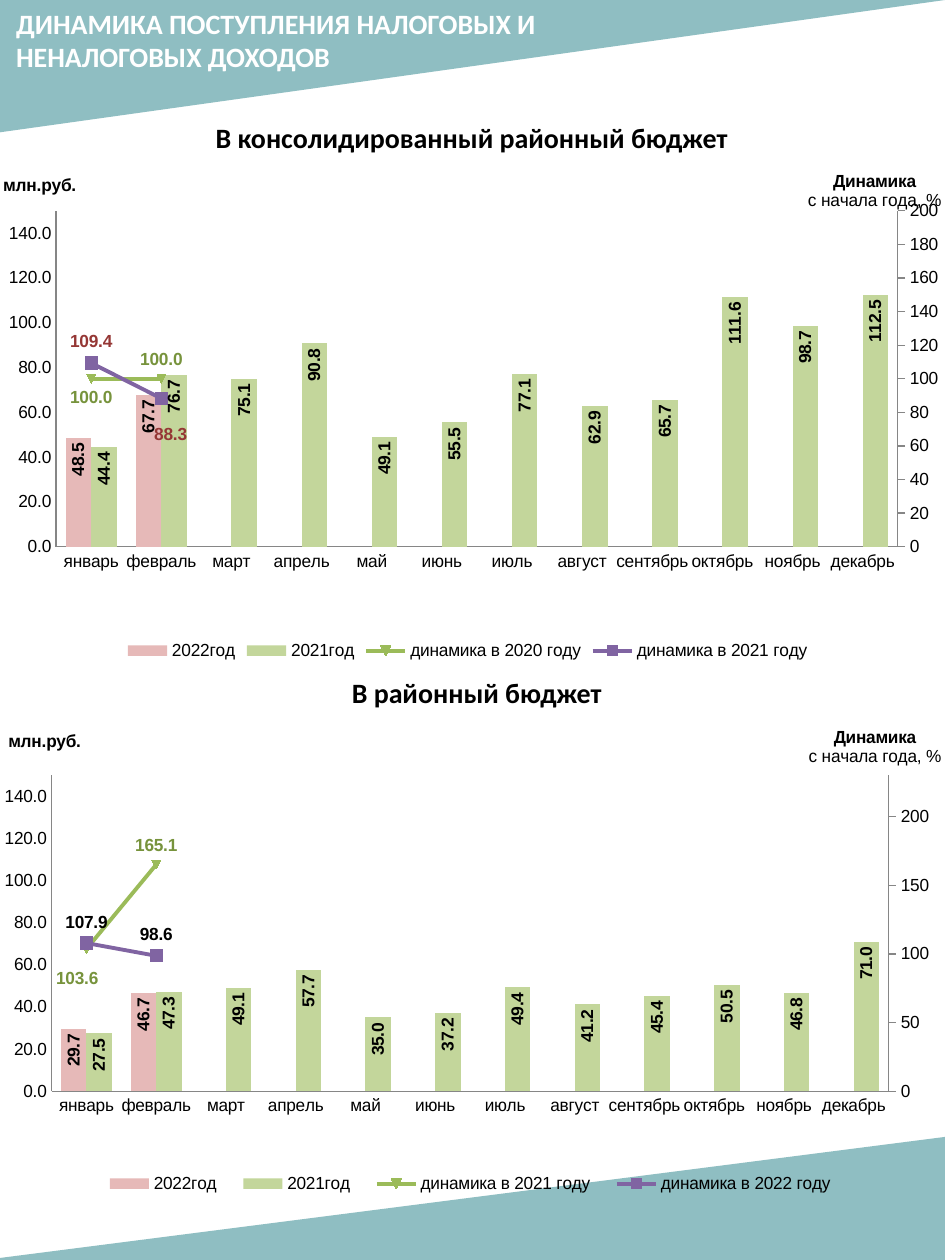
import copy
from dataclasses import dataclass

import pptx
import pptx.chart.axis
import pptx.chart.data
import pptx.dml.color
import pptx.enum.chart
import pptx.enum.shapes
import pptx.enum.text
import pptx.oxml
import pptx.oxml.ns
import pptx.util

Inches = pptx.util.Inches
Pt = pptx.util.Pt
LabelPosition = pptx.enum.chart.XL_LABEL_POSITION
TickMark = pptx.enum.chart.XL_TICK_MARK


@dataclass(frozen=True)
class Theme:
    band: str = "519AA0"
    white: str = "FFFFFF"
    ink: str = "000000"
    axis: str = "868686"
    bars: tuple = ("E6B9B8", "C3D69B")
    lines: tuple = ("9BBB59", "8064A2")
    green_label: str = "77933C"
    red_label: str = "953735"
    heading_font: str = "Calibri"
    chart_font: str = "Arial"
    heading_size: int = 16
    chart_size: int = 10


THEME = Theme()
MONTHS = ["январь", "февраль", "март", "апрель", "май", "июнь", "июль",
          "август", "сентябрь", "октябрь", "ноябрь", "декабрь"]
CONSOLIDATED = {
    "bars": {"2022год": [48.5, 67.7],
             "2021год": [44.4, 76.7, 75.1, 90.8, 49.1, 55.5, 77.1, 62.9, 65.7, 111.6, 98.7, 112.5]},
    "lines": {"динамика в 2020 году": [100, 100], "динамика в 2021 году": [109.4, 88.3]},
    "label_colors": (THEME.green_label, THEME.red_label),
    "lowered": {(0, 0): (0, 0), (1, 1): (0.01, 0.03)},
    "right_scale": {"maximum_scale": 200, "major_unit": 20},
    "plot": (0.06, 0.1, 0.9, 0.66),
    "legend": (0.13, 0.95, 0.74, 0.05),
}
DISTRICT = {
    "bars": {"2022год": [29.7, 46.7],
             "2021год": [27.5, 47.3, 49.1, 57.7, 35, 37.2, 49.4, 41.2, 45.4, 50.5, 46.8, 71]},
    "lines": {"динамика в 2021 году": [103.6, 165.1], "динамика в 2022 году": [107.9, 98.6]},
    "label_colors": (THEME.green_label, THEME.ink),
    "lowered": {(0, 0): (-0.01, 0.02)},
    "right_scale": {"maximum_scale": 230, "major_unit": 50},
    "plot": (0.05, 0.11, 0.9, 0.58),
    "legend": (0.09, 0.83, 0.82, 0.06),
}


def rgb(value):
    return pptx.dml.color.RGBColor.from_string(value)


def apply(target, values):
    for name, value in values.items():
        setattr(target, name, value)


def style_font(font, size, color=THEME.ink, bold=False, name=THEME.chart_font):
    apply(font, {"size": Pt(size), "bold": bold, "name": name})
    font.color.rgb = rgb(color)


def chart_xml(tag, body="", attributes=""):
    return pptx.oxml.parse_xml(
        f'<c:{tag} {pptx.oxml.ns.nsdecls("c", "a")} {attributes}>{body}</c:{tag}>')


def set_layout(parent, previous, position, mode='<c:xMode val="edge"/><c:yMode val="edge"/>'):
    for old in parent.xpath("./c:layout"):
        parent.remove(old)
    body = mode + "".join(f'<c:{name} val="{value}"/>' for name, value in zip("xywh", position))
    layout = chart_xml("layout", f"<c:manualLayout>{body}</c:manualLayout>")
    if previous is None:
        layout[0].insert(0, chart_xml("layoutTarget", attributes='val="inner"'))
        parent.insert(0, layout)
    else:
        previous.addnext(layout)


def add_band(slide, box, flip):
    band = slide.shapes.add_shape(pptx.enum.shapes.MSO_SHAPE.RIGHT_TRIANGLE, *map(Inches, box))
    band.shadow.inherit = False
    band.rotation = 180
    band.element.spPr.xfrm.set(flip, "1")
    band.fill.solid()
    band.fill.fore_color.rgb = rgb(THEME.band)
    band.line.fill.background()
    color = band.element.spPr.xpath("./a:solidFill/a:srgbClr")[0]
    color.append(pptx.oxml.parse_xml(f'<a:alpha {pptx.oxml.ns.nsdecls("a")} val="64000"/>'))


def add_heading(slide, box, text, color, align):
    frame = slide.shapes.add_textbox(*map(Inches, box)).text_frame
    frame.word_wrap = True
    paragraph = frame.paragraphs[0]
    paragraph.alignment = align
    run = paragraph.add_run()
    run.text = text
    style_font(run.font, THEME.heading_size, color, True, THEME.heading_font)


def split_lines(chart):
    area = chart.element.xpath("//c:plotArea")[0]
    bars = area.xpath("./c:barChart")[0]
    right_axes = [copy.deepcopy(axis) for axis in area.xpath("./c:catAx | ./c:valAx")]
    axis_ids = ("50010", "50020")
    for axis, own, other in zip(right_axes, axis_ids, reversed(axis_ids)):
        axis.xpath("./c:axId")[0].set("val", own)
        axis.xpath("./c:crossAx")[0].set("val", other)
        area.append(axis)
    hidden, right = right_axes
    pptx.chart.axis.CategoryAxis(hidden).visible = False
    right.xpath("./c:axPos")[0].set("val", "r")
    for crossing in right.xpath("./c:crosses | ./c:crossesAt"):
        right.remove(crossing)
    right.xpath("./c:crossAx")[0].addnext(chart_xml("crosses", attributes='val="max"'))
    ids = "".join(f'<c:axId val="{own}"/>' for own in axis_ids)
    lines = chart_xml("lineChart", '<c:grouping val="standard"/><c:varyColors val="0"/>'
                                   f'<c:marker val="1"/>{ids}')
    bars.addnext(lines)
    marker = lines.xpath("./c:marker")[0]
    for series in bars.xpath("./c:ser")[2:]:
        for invert in series.xpath("./c:invertIfNegative"):
            series.remove(invert)
        marker.addprevious(series)
    return pptx.chart.axis.ValueAxis(right)


def style_axis(axis, tick, number_format=None, scale=None):
    apply(axis, {"has_major_gridlines": False, "major_tick_mark": tick,
                 "minor_tick_mark": TickMark.NONE, **(scale or {})})
    axis.format.line.color.rgb = rgb(THEME.axis)
    style_font(axis.tick_labels.font, THEME.chart_size)
    if number_format:
        apply(axis.tick_labels, {"number_format": number_format, "number_format_is_linked": False})


def title_axis(axis, lines, position):
    title = axis.axis_title
    frame = title.text_frame
    for index, (text, bold) in enumerate(lines):
        paragraph = frame.add_paragraph() if index else frame.paragraphs[0]
        paragraph.alignment = pptx.enum.text.PP_ALIGN.CENTER
        run = paragraph.add_run()
        run.text = text
        style_font(run.font, THEME.chart_size, bold=bold)
    rotate(title.element.xpath(".//a:bodyPr"), "0")
    set_layout(title.element, title.element.xpath("./c:tx")[0], position)


def rotate(bodies, angle):
    for body in bodies:
        body.set("rot", angle)
        body.set("vert", "horz")


def label_series(series, color, position, number_format):
    labels = series.data_labels
    apply(labels, {"show_value": True, "position": position,
                   "number_format": number_format, "number_format_is_linked": False})
    style_font(labels.font, THEME.chart_size, color, True)


def lower_label(chart, trend, point, color, offset):
    label = chart.plots[1].series[trend].points[point].data_label
    label.position = LabelPosition.BELOW
    style_font(label.font, THEME.chart_size, color, True)
    entry = chart.element.xpath(
        f"//c:lineChart/c:ser[{trend + 1}]/c:dLbls/c:dLbl[c:idx/@val={point}]")[0]
    entry.xpath("./c:txPr")[0].addprevious(
        chart_xml("numFmt", attributes='formatCode="0.0" sourceLinked="0"'))
    if any(offset):
        set_layout(entry, entry.xpath("./c:idx")[0], offset, mode="")


def hide_leaders(chart):
    for labels in chart.element.xpath("//c:lineChart/c:ser/c:dLbls"):
        for leader in labels.xpath("./c:showLeaderLines"):
            labels.remove(leader)
        labels.append(chart_xml("showLeaderLines", attributes='val="0"'))
        labels.append(chart_xml("extLst", '<c:ext uri="{CE6537A1-D6FC-4f65-9D91-7224C49458BB}" '
                                'xmlns:c15="http://schemas.microsoft.com/office/drawing/2012/chart">'
                                '<c15:showLeaderLines val="0"/></c:ext>'))


def add_budget_chart(slide, box, budget):
    data = pptx.chart.data.CategoryChartData()
    data.categories = MONTHS
    for name, values in {**budget["bars"], **budget["lines"]}.items():
        data.add_series(name, values + [None] * (len(MONTHS) - len(values)))
    chart = slide.shapes.add_chart(pptx.enum.chart.XL_CHART_TYPE.COLUMN_CLUSTERED,
                                   *map(Inches, box), data).chart
    apply(chart, {"has_title": False, "has_legend": True})
    style_font(chart.font, THEME.chart_size)
    chart.element.xpath("./c:txPr")[0].addprevious(
        chart_xml("spPr", "<a:noFill/><a:ln><a:noFill/></a:ln>"))
    left_axis = chart.value_axis
    right_axis = split_lines(chart)
    columns, dynamics = chart.plots
    apply(columns, {"gap_width": 75, "overlap": 0, "vary_by_categories": False})

    for series, color in zip(columns.series, THEME.bars):
        series.format.fill.solid()
        series.format.fill.fore_color.rgb = rgb(color)
        label_series(series, THEME.ink, LabelPosition.INSIDE_END, "#,##0.0")
    rotate(chart.element.xpath("//c:barChart/c:ser/c:dLbls//a:bodyPr"), "-5400000")

    for series, color, label_color in zip(dynamics.series, THEME.lines, budget["label_colors"]):
        series.smooth = False
        series.format.line.color.rgb = rgb(color)
        series.format.line.width = Pt(2.25)
        label_series(series, label_color, LabelPosition.ABOVE, "0.0")
    square = dynamics.series[1].marker
    apply(square, {"style": pptx.enum.chart.XL_MARKER_STYLE.SQUARE, "size": 7})
    square.format.fill.solid()
    square.format.fill.fore_color.rgb = rgb(THEME.bars[0])
    for (trend, point), offset in budget["lowered"].items():
        lower_label(chart, trend, point, budget["label_colors"][trend], offset)
    hide_leaders(chart)

    style_axis(chart.category_axis, TickMark.NONE)
    style_axis(left_axis, TickMark.NONE, r"#\ ##0.0",
               {"minimum_scale": 0, "maximum_scale": 150, "major_unit": 20})
    style_axis(right_axis, TickMark.OUTSIDE, "0", {"minimum_scale": 0, **budget["right_scale"]})
    title_axis(left_axis, [("млн.руб.", True)], (0, 0.02))
    title_axis(right_axis, [("Динамика", True), ("с начала года, %", False)], (0.86, 0.01))

    apply(chart.legend, {"position": pptx.enum.chart.XL_LEGEND_POSITION.BOTTOM,
                         "include_in_layout": False})
    style_font(chart.legend.font, THEME.chart_size)
    set_layout(chart.element.xpath("//c:plotArea")[0], None, budget["plot"])
    legend = chart.element.xpath("//c:legend")[0]
    set_layout(legend, legend.xpath("./c:legendPos")[0], budget["legend"])


def main():
    deck = pptx.Presentation()
    apply(deck, {"slide_width": Inches(7.5), "slide_height": Inches(10)})
    slide = deck.slides.add_slide(deck.slide_layouts[6])
    align = pptx.enum.text.PP_ALIGN
    add_band(slide, (0, 0, 7.5, 1.05), "flipH")
    add_band(slide, (-0.13, 9.02, 7.65, 0.98), "flipV")
    for box, text, color, side in (
            ((0.03, 0, 4.87, 0.63), "ДИНАМИКА ПОСТУПЛЕНИЯ НАЛОГОВЫХ И НЕНАЛОГОВЫХ ДОХОДОВ",
             THEME.white, align.LEFT),
            ((1.31, 0.91, 4.87, 0.36), "В консолидированный районный бюджет", THEME.ink, align.CENTER),
            ((1.35, 5.31, 4.87, 0.36), "В районный бюджет", THEME.ink, align.CENTER)):
        add_heading(slide, box, text, color, side)
    add_budget_chart(slide, (0, 1.27, 7.5, 4.04), CONSOLIDATED)
    add_budget_chart(slide, (0, 5.68, 7.5, 4.32), DISTRICT)
    deck.save("out.pptx")


if __name__ == "__main__":
    main()
